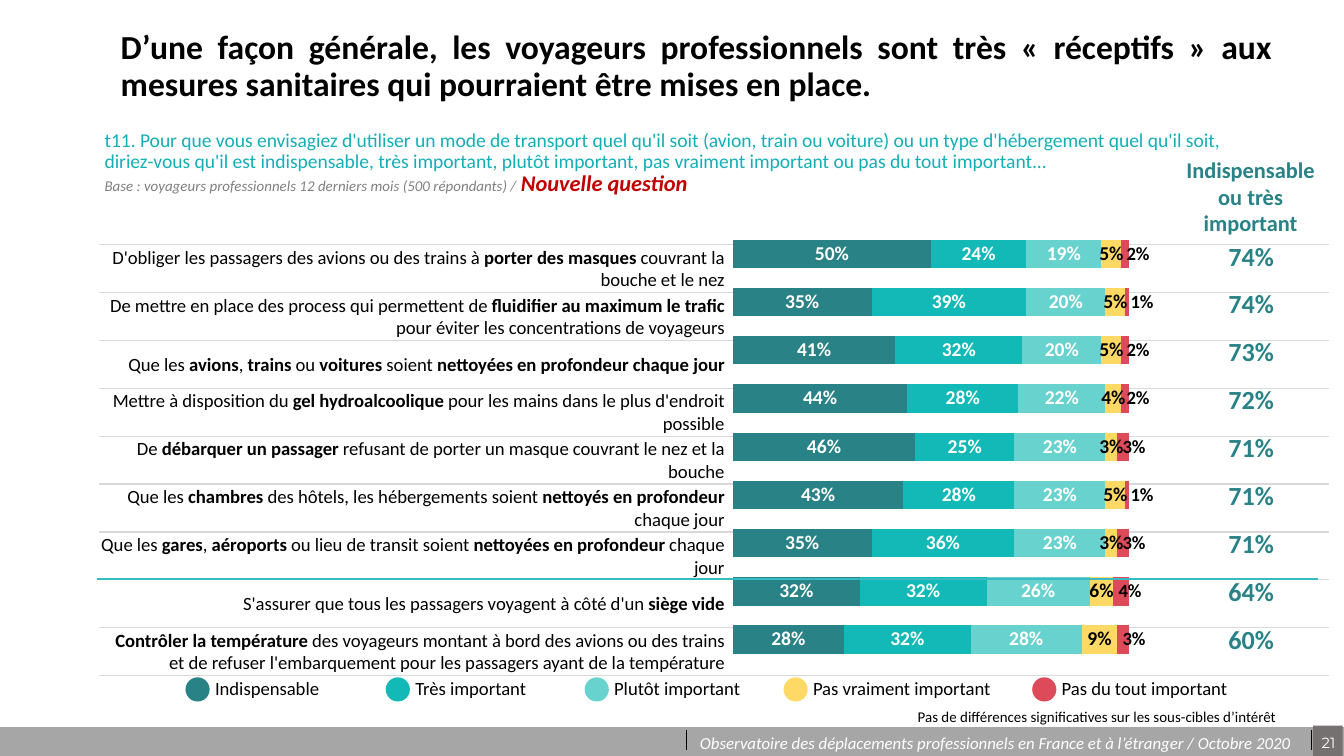
"""Builds the survey slide on sanitary measures expected by business travellers."""
import dataclasses
import typing

import lxml.etree
import pptx
import pptx.chart.data
import pptx.dml.color
import pptx.enum.chart
import pptx.enum.shapes
import pptx.enum.text
import pptx.oxml.ns
import pptx.util

PX = 9144
NO_STYLE = "{2D5ABB26-0587-4C30-8999-92F81FD0307C}"
ALIGN = pptx.enum.text.PP_ALIGN
MIDDLE = pptx.enum.text.MSO_ANCHOR.MIDDLE
SHAPES = pptx.enum.shapes.MSO_SHAPE


@dataclasses.dataclass(frozen=True)
class Theme:
    font: str = "Calibri"
    number_font: str = "Montserrat"
    black: str = "000000"
    white: str = "FFFFFF"
    question: str = "13AFB7"
    muted: str = "808080"
    alert: str = "C00000"
    total: str = "288286"
    rule: str = "D9D9D9"
    divider: str = "37BBC1"
    footer: str = "A6A6A6"
    badge: str = "767171"
    scale: tuple = ("288286", "13B9B7", "68D2CF", "FFD966", "DD4B5A")
    title_size: float = 18
    total_size: float = 14
    emphasis_size: float = 12
    label_size: float = 10.5
    body_size: float = 10
    footer_size: float = 9
    note_size: float = 8
    number_size: float = 7.9


class Box(typing.NamedTuple):
    left: int
    top: int
    width: int
    height: int

    def inner(self, left, top, width, height):
        return Box(self.left + left, self.top + top, width, height)

    def emu(self):
        return [length * PX for length in self]


THEME = Theme()
ANSWERS = ["Indispensable", "Très important", "Plutôt important",
           "Pas vraiment important", "Pas du tout important"]
MEASURES = [
    ("D'obliger les passagers des avions ou des trains à *porter des masques *couvrant la bouche et le nez",
     (50, 24, 19, 5, 2), 74),
    ("De mettre en place des process qui permettent de *fluidifier au maximum le trafic *"
     "pour éviter les concentrations de voyageurs", (35, 39, 20, 5, 1), 74),
    ("Que les *avions*, *trains* ou *voitures* soient *nettoyées en profondeur chaque jour*",
     (41, 32, 20, 5, 2), 73),
    ("Mettre à disposition du *gel hydroalcoolique *pour les mains dans le plus d'endroit possible",
     (44, 28, 22, 4, 2), 72),
    ("De *débarquer un passager* refusant de porter un masque couvrant le nez et la bouche",
     (46, 25, 23, 3, 3), 71),
    ("Que les *chambres* des hôtels, les hébergements soient *nettoyés en profondeur *chaque jour",
     (43, 28, 23, 5, 1), 71),
    ("Que les *gares*, *aéroports* ou lieu de transit soient *nettoyées en profondeur *chaque jour",
     (35, 36, 23, 3, 3), 71),
    ("S'assurer que tous les passagers voyagent à côté d'un *siège vide*", (32, 32, 26, 6, 4), 64),
    ("*Contrôler la température *des voyageurs montant à bord des avions ou des trains "
     "et de refuser l'embarquement pour les passagers ayant de la température", (28, 32, 28, 9, 3), 60),
]


def rgb(color):
    return pptx.dml.color.RGBColor.from_string(color)


def style_font(font, size, color, bold=False, italic=False, name=THEME.font):
    font.name, font.size = name, pptx.util.Pt(size)
    font.bold, font.italic = bold, italic
    font.color.rgb = rgb(color)


def add_text(slide, box, text, size, color, align=ALIGN.LEFT, anchor=None, **font):
    frame = slide.shapes.add_textbox(*box.emu()).text_frame
    frame.word_wrap = True
    frame.vertical_anchor = anchor
    paragraph = frame.paragraphs[0]
    paragraph.text = text
    paragraph.alignment = align
    style_font(paragraph.font, size, color, **font)
    return paragraph


def add_shape(slide, kind, box, color):
    shape = slide.shapes.add_shape(kind, *box.emu())
    shape.shadow.inherit = False
    shape.fill.solid()
    shape.fill.fore_color.rgb = rgb(color)
    shape.line.fill.background()


def add_line(slide, box, color, width):
    left, top, across, down = box.emu()
    line = slide.shapes.add_connector(
        pptx.enum.shapes.MSO_CONNECTOR.STRAIGHT, left, top, left + across, top + down)
    line.line.color.rgb = rgb(color)
    line.line.width = pptx.util.Pt(width)
    lxml.etree.SubElement(line._element.spPr, pptx.oxml.ns.qn("a:effectLst"))


def add_table(slide, box, rows, columns):
    table = slide.shapes.add_table(rows, len(columns), *box.emu()).table
    table.first_row = table.horz_banding = False
    table._tbl.tblPr.find(pptx.oxml.ns.qn("a:tableStyleId")).text = NO_STYLE
    for column, width in zip(table.columns, columns):
        column.width = width * PX
    for cell in table.iter_cells():
        cell.margin_left = cell.margin_right = cell.margin_top = PX
        cell.margin_bottom = 0
        cell.vertical_anchor = MIDDLE
        cell.fill.background()
        style_font(cell.text_frame.paragraphs[0].font, THEME.body_size, THEME.black)
    return table


def rule_cell(cell):
    qn = pptx.oxml.ns.qn
    for index, side in enumerate(("a:lnT", "a:lnB")):
        border = lxml.etree.Element(qn(side), w=str(pptx.util.Pt(0.75)))
        fill = lxml.etree.SubElement(border, qn("a:solidFill"))
        lxml.etree.SubElement(fill, qn("a:srgbClr"), val=THEME.rule)
        cell._tc.get_or_add_tcPr().insert(index, border)


def build_heading(slide, box):
    title = add_text(slide, box.inner(12, 0, 877, 68),
                     "D’une façon générale, les voyageurs professionnels sont très « réceptifs » "
                     "aux mesures sanitaires qui pourraient être mises en place.",
                     THEME.title_size, THEME.black, ALIGN.JUSTIFY, MIDDLE, bold=True)
    title.line_spacing = pptx.util.Pt(20)
    question = add_text(slide, box.inner(0, 77, 866, 38),
                        "t11. Pour que vous envisagiez d'utiliser un mode de transport quel qu'il soit (avion, train "
                        "ou voiture) ou un type d'hébergement quel qu'il soit, diriez-vous qu'il est indispensable, "
                        "très important, plutôt important, pas vraiment important ou pas du tout important...",
                        THEME.label_size, THEME.question)
    question.line_spacing = 0.9
    question.add_line_break()
    for text, size, color, bold in (
            ("Base : voyageurs professionnels 12 derniers mois (500 répondants) / ",
             THEME.note_size, THEME.muted, False),
            ("Nouvelle question", THEME.emphasis_size, THEME.alert, True)):
        run = question.add_run()
        run.text = text
        style_font(run.font, size, color, bold, italic=True)


def build_measures(slide, box):
    table = add_table(slide, box, len(MEASURES), (466, box.width - 466))
    for cell in table.iter_cells():
        rule_cell(cell)
    for row, (measure, _, _) in enumerate(MEASURES):
        paragraph = table.cell(row, 0).text_frame.paragraphs[0]
        paragraph.alignment = ALIGN.RIGHT
        for index, part in enumerate(measure.split("*")):
            if part:
                run = paragraph.add_run()
                run.text = part
                run.font.bold = index % 2 == 1


def build_chart(slide, box):
    data = pptx.chart.data.CategoryChartData(number_format="0%")
    data.categories = [str(number + 1) for number in range(len(MEASURES))]
    for index in range(len(ANSWERS)):
        data.add_series(f"Series {index + 1}", [shares[index] / 100 for _, shares, _ in MEASURES])
    chart = slide.shapes.add_chart(
        pptx.enum.chart.XL_CHART_TYPE.BAR_STACKED, *box.emu(), data).chart
    chart.has_legend = chart.has_title = False
    style_font(chart.font, THEME.title_size, THEME.black)
    chart.category_axis.reverse_order = True
    chart.value_axis.minimum_scale, chart.value_axis.maximum_scale = 0, 1
    chart.value_axis.has_major_gridlines = False
    chart.category_axis.visible = chart.value_axis.visible = False
    plot = chart.plots[0]
    plot.gap_width, plot.overlap, plot.vary_by_categories = 70, 100, False
    for index, series in enumerate(plot.series):
        series.format.fill.solid()
        series.format.fill.fore_color.rgb = rgb(THEME.scale[index])
        labels = series.data_labels
        labels.show_value = True
        labels.number_format, labels.number_format_is_linked = "0%", False
        last = index == len(ANSWERS) - 1
        style_font(labels.font, THEME.body_size if last else THEME.label_size,
                   THEME.white if index < 3 else THEME.black, bold=True)
        if last:
            labels.position = pptx.enum.chart.XL_LABEL_POSITION.INSIDE_BASE
    qn = pptx.oxml.ns.qn
    area = chart._chartSpace.chart.plotArea
    for old in area.findall(qn("c:layout")):
        area.remove(old)
    layout = lxml.etree.Element(qn("c:layout"))
    area.insert(0, layout)
    manual = lxml.etree.SubElement(layout, qn("c:manualLayout"))
    for tag, value in (("layoutTarget", "inner"), ("xMode", "edge"), ("yMode", "edge"),
                       ("x", "0.06"), ("y", "0"), ("w", "0.87"), ("h", "1")):
        lxml.etree.SubElement(manual, qn("c:" + tag), val=value)


def build_legend(slide, box):
    columns = (149, 148, 148, 185, 149)
    table = add_table(slide, box.inner(21, 0, sum(columns), 18), 1, columns)
    for index, answer in enumerate(ANSWERS):
        table.cell(0, index).text_frame.paragraphs[0].add_run().text = answer
        add_shape(slide, SHAPES.OVAL, box.inner(sum(columns[:index]), 1, 18, 18), THEME.scale[index])


def build_totals(slide, box):
    add_text(slide, box.inner(0, 0, box.width, 71), "Indispensable ou très important",
             THEME.emphasis_size, THEME.total, ALIGN.CENTER, bold=True)
    table = add_table(slide, box.inner(34, 62, 62, 321), len(MEASURES), (62,))
    for cell, (_, _, total) in zip(table.iter_cells(), MEASURES):
        paragraph = cell.text_frame.paragraphs[0]
        paragraph.text = f"{total}%"
        paragraph.alignment = ALIGN.CENTER
        style_font(paragraph.font, THEME.total_size, THEME.total, bold=True)


def build_footer(slide, box):
    add_shape(slide, SHAPES.RECTANGLE, box, THEME.footer)
    add_shape(slide, SHAPES.RECTANGLE, box.inner(977, -1, 22, 24), THEME.badge)
    add_text(slide, box.inner(968, 0, 41, 24), "21", THEME.number_size, THEME.white, ALIGN.CENTER,
             name=THEME.number_font)
    add_text(slide, box.inner(511, -1, 462, 25),
             "Observatoire des déplacements professionnels en France et à l’étranger / Octobre 2020",
             THEME.footer_size, THEME.white, italic=True)
    for left in (511, 976):
        add_line(slide, box.inner(left, 2, 0, 15), THEME.black, 0.5)


def main():
    presentation = pptx.Presentation()
    presentation.slide_width = 1000 * PX
    presentation.slide_height = presentation.slide_width * 9 // 16
    slide = presentation.slides.add_slide(presentation.slide_layouts[6])
    build_footer(slide, Box(0, 541, 1000, 24))
    build_heading(slide, Box(68, 15, 889, 115))
    build_measures(slide, Box(74, 182, 915, 321))
    build_chart(slide, Box(525, 171, 339, 323))
    build_legend(slide, Box(138, 503, 800, 19))
    build_totals(slide, Box(866, 111, 129, 383))
    add_text(slide, Box(673, 523, 297, 21),
             "Pas de différences significatives sur les sous-cibles d’intérêt",
             THEME.note_size, THEME.black, anchor=MIDDLE)
    add_line(slide, Box(72, 431, 909, 0), THEME.divider, 1)
    presentation.save("out.pptx")


if __name__ == "__main__":
    main()
